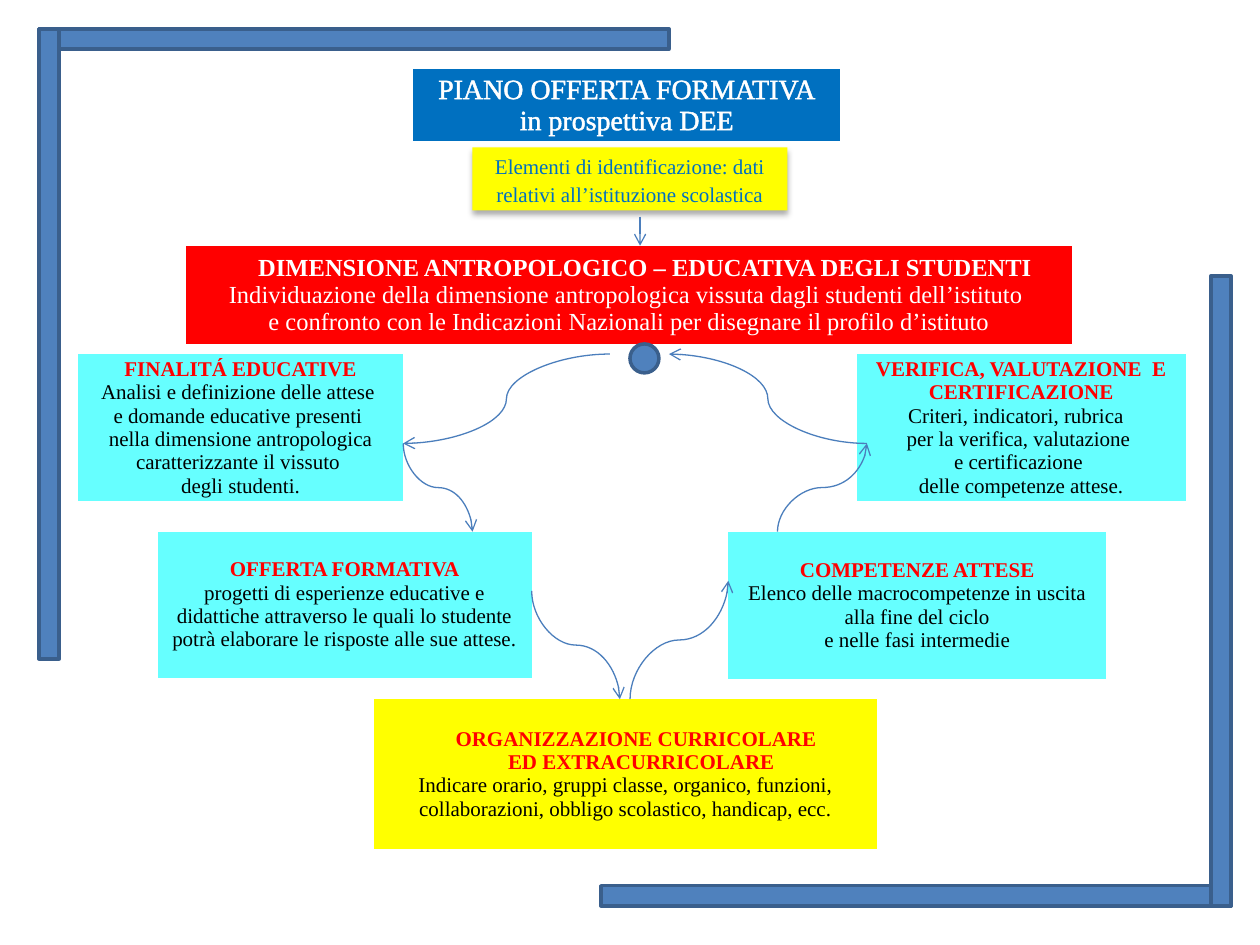
from lxml import etree
from pptx import Presentation
from pptx import util as u
from pptx.dml.color import RGBColor
from pptx.enum import shapes, text
from pptx.oxml import parse_xml
from pptx.oxml.ns import qn

NS = 'xmlns:a="http://schemas.openxmlformats.org/drawingml/2006/main"'
NO_STYLE = "{2D5ABB26-0587-4C30-8999-92F81FD0307C}"
RED, WHITE, BLACK, BLUE = "FF0000", "FFFFFF", "000000", "0070C0"
CYAN, YELLOW, STEEL, NAVY, ARROW = "66FFFF", "FFFF00", "4F81BD", "3A5F8C", "4B7EBC"
BAR, BAR_LENGTH = 0.16, 5


def color(value):
    """Turn a hex string into a colour."""
    return RGBColor.from_string(value)


def inches(*values):
    """Turn numbers of inches into lengths."""
    return [u.Inches(v) for v in values]


def write(p, words, size=12, fill=BLACK, bold=False, margin=0, indent=0, spacing=None, outline=0):
    """Fill a centred paragraph, breaking its lines at each newline."""
    p.alignment = text.PP_ALIGN.CENTER
    p.line_spacing = spacing
    pPr = p._p.get_or_add_pPr()
    pPr.set("marL", str(u.Inches(margin)))
    pPr.set("indent", str(u.Inches(indent)))
    for i, line in enumerate(words.split("\n")):
        if i:
            p.add_line_break()
        r = p.add_run()
        r.text = line
        r.font.name, r.font.size, r.font.bold = "Times New Roman", u.Pt(size), bold
        r.font.color.rgb = color(fill)
        if outline:
            r._r.get_or_add_rPr().insert(0, parse_xml(
                f'<a:ln {NS} w="{u.Pt(outline)}"><a:solidFill><a:srgbClr val="{fill}"/></a:solidFill></a:ln>'))


def panel(s, box, fill, paragraphs, side=0.05):
    """Place a one-cell table holding (words, format) paragraphs."""
    table = s.shapes.add_table(1, 1, *inches(*box)).table
    table.first_row = table.horz_banding = False
    table._tbl.tblPr.find(qn("a:tableStyleId")).text = NO_STYLE
    cell = table.cell(0, 0)
    cell.fill.solid()
    cell.fill.fore_color.rgb = color(fill)
    cell.vertical_anchor = text.MSO_ANCHOR.MIDDLE
    cell.margin_left = cell.margin_right = u.Inches(side)
    cell.margin_top = cell.margin_bottom = 0
    tf = cell.text_frame
    for i, (words, fmt) in enumerate(paragraphs):
        write(tf.add_paragraph() if i else tf.paragraphs[0], words, **fmt)


def topic(s, box, fill, heading, *body, **fmt):
    """Place a panel with a red bold heading above black text."""
    panel(s, box, fill, [(heading, dict(fill=RED, bold=True, **fmt))] + [(b, {}) for b in body])


def shape(s, kind, box, fill, line=None):
    """Place a filled preset shape, outlined when a line colour is given."""
    sp = s.shapes.add_shape(kind, *inches(*box))
    sp.shadow.inherit = False
    sp.fill.solid()
    sp.fill.fore_color.rgb = color(fill)
    if line:
        sp.line.color.rgb = color(line)
        sp.line.width = u.Pt(2)
    else:
        sp.line.fill.background()
    return sp


def identification(s, box):
    """Place the shadowed label with the school's details."""
    sp = shape(s, shapes.MSO_SHAPE.RECTANGLE, box, YELLOW)
    sp._element.spPr.find(qn("a:effectLst")).append(parse_xml(
        f'<a:outerShdw {NS} blurRad="{u.Pt(3.5)}" dist="{u.Pt(2.2)}" dir="5400000" rotWithShape="0">'
        f'<a:srgbClr val="{BLACK}"><a:alpha val="32000"/></a:srgbClr></a:outerShdw>'))
    tf = sp.text_frame
    tf.word_wrap = True
    tf.vertical_anchor = text.MSO_ANCHOR.MIDDLE
    write(tf.paragraphs[0], "Elementi di identificazione: dati relativi all’istituzione scolastica",
          fill=BLUE, spacing=1.12)


def corner(s, box, right=False):
    """Frame one corner of the box with a horizontal and a vertical bar."""
    left, top, width, height = box
    x, y = left + width, top + height
    bars = [(left, top, BAR_LENGTH, BAR), (left, top, BAR, BAR_LENGTH)]
    if right:
        bars = [(x - BAR_LENGTH, y - BAR, BAR_LENGTH, BAR), (x - BAR, y - BAR_LENGTH, BAR, BAR_LENGTH)]
    for bar in bars:
        shape(s, shapes.MSO_SHAPE.RECTANGLE, bar, STEEL, NAVY)


def arrow(s, start, end, kind=shapes.MSO_CONNECTOR.CURVE, upright=False):
    """Draw an arrow; an upright curve leaves and arrives vertically."""
    (x1, y1), (x2, y2) = start, end
    turn = 0
    if upright:
        cx, cy, dx, dy = (x1 + x2) / 2, (y1 + y2) / 2, x2 - x1, y2 - y1
        turn = 270 if dy > 0 else 90
        a, b = (-dy / 2, dx / 2) if dy > 0 else (dy / 2, -dx / 2)
        x1, y1, x2, y2 = cx - a, cy - b, cx + a, cy + b
    c = s.shapes.add_connector(kind, *inches(x1, y1, x2, y2))
    c.line.color.rgb = color(ARROW)
    c.line.width = u.Pt(0.75)
    spPr = c._element.spPr
    if turn:
        spPr.find(qn("a:xfrm")).set("rot", str(turn * 60000))
    etree.SubElement(spPr.find(qn("a:ln")), qn("a:tailEnd"), type="arrow")
    etree.SubElement(spPr, qn("a:effectLst"))


def headings(s):
    """Place the title, the school label and the red band."""
    title = dict(size=16, fill=WHITE, outline=1.45)
    panel(s, (3.28, 0.55, 3.39, 0.57), BLUE,
          [("PIANO OFFERTA FORMATIVA", title), ("in prospettiva DEE", title)], side=0.07)
    band = dict(size=14, fill=WHITE)
    panel(s, (1.48, 1.95, 7.03, 0.78), RED, [
        ("DIMENSIONE ANTROPOLOGICO – EDUCATIVA DEGLI STUDENTI", dict(band, bold=True, indent=0.25)),
        ("Individuazione della dimensione antropologica vissuta dagli studenti dell’istituto \n"
         "e confronto con le Indicazioni Nazionali per disegnare il profilo d’istituto", band)])
    identification(s, (3.75, 1.17, 2.5, 0.5))


def cycle(s):
    """Place the five topics and the arrows that run round them."""
    high, low = 2.81, 4.22
    topic(s, (0.62, high, 2.58, 1.17), CYAN, "FINALITÁ EDUCATIVE",
          "Analisi e definizione delle attese \ne domande educative presenti \n"
          "nella dimensione antropologica caratterizzante il vissuto \ndegli studenti.")
    topic(s, (1.25, low, 2.97, 1.16), CYAN, "OFFERTA FORMATIVA",
          "progetti di esperienze educative e didattiche attraverso le quali lo studente "
          "potrà elaborare le risposte alle sue attese.")
    topic(s, (2.97, 5.55, 3.99, 1.19), YELLOW, "ORGANIZZAZIONE CURRICOLARE  \nED EXTRACURRICOLARE",
          "Indicare orario, gruppi classe, organico, funzioni, collaborazioni, "
          "obbligo scolastico, handicap, ecc.", margin=0.25)
    topic(s, (5.78, low, 3, 1.17), CYAN, "COMPETENZE ATTESE",
          "Elenco delle macrocompetenze in uscita alla fine del ciclo", "e nelle fasi intermedie")
    topic(s, (6.8, high, 2.61, 1.17), CYAN, "VERIFICA, VALUTAZIONE  E CERTIFICAZIONE",
          "Criteri, indicatori, rubrica  \nper la verifica, valutazione \n"
          "e certificazione \ndelle competenze attese.")
    arrow(s, (5.08, 1.72), (5.08, 1.95), shapes.MSO_CONNECTOR.STRAIGHT)
    aims, review = (3.2, 3.52), (6.88, 3.52)
    arrow(s, (4.84, high), aims)
    for start, end in ((aims, (3.75, low)), ((4.22, 4.69), (4.92, 5.55)),
                       ((5, 5.55), (5.78, 4.61)), ((6.17, low), review)):
        arrow(s, start, end, upright=True)
    arrow(s, review, (5.31, high))
    shape(s, shapes.MSO_SHAPE.OVAL, (5, 2.73, 0.23, 0.23), STEEL, NAVY)


def main():
    """Build and save the slide."""
    prs = Presentation()
    prs.slide_width, prs.slide_height = inches(10, 7.5)
    s = prs.slides.add_slide(prs.slide_layouts[6])
    frame = (0.31, 0.23, 9.46, 6.96)
    corner(s, frame)
    corner(s, frame, right=True)
    headings(s)
    cycle(s)
    prs.save("out.pptx")


if __name__ == "__main__":
    main()
